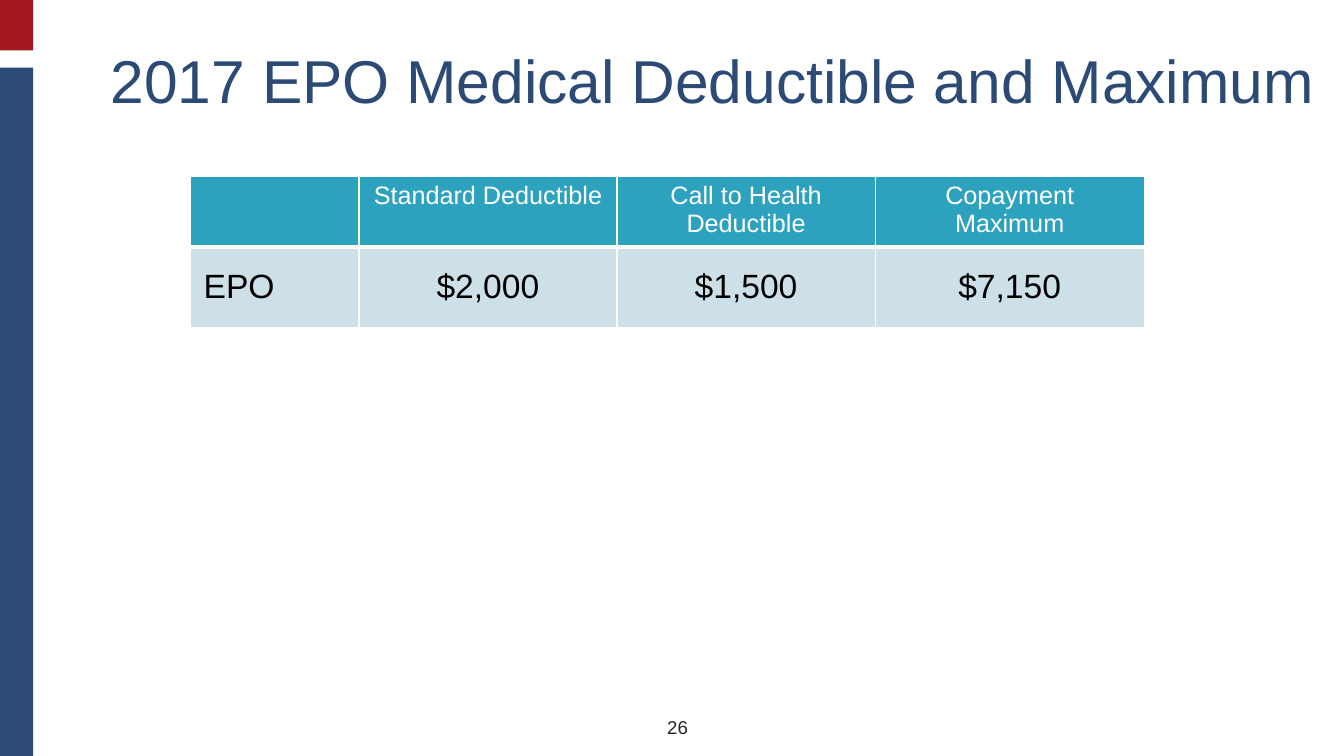
import dataclasses

import lxml.etree
import pptx
import pptx.dml.color
import pptx.enum.shapes
import pptx.enum.text
import pptx.oxml.ns
import pptx.slide
import pptx.table
import pptx.text.text
import pptx.util

Inches = pptx.util.Inches
Align = pptx.enum.text.PP_ALIGN
Anchor = pptx.enum.text.MSO_ANCHOR


@dataclasses.dataclass(frozen=True)
class Theme:
    font: str = "Arial"
    red: str = "A3171E"
    navy: str = "2B4A76"
    teal: str = "2DA2BF"
    pale_blue: str = "CDE0E8"
    white: str = "FFFFFF"
    black: str = "000000"
    grey: str = "262626"
    title_size: float = 43.2
    header_size: float = 18
    body_size: float = 24
    number_size: float = 13.3


@dataclasses.dataclass(frozen=True)
class Box:
    left: float
    top: float
    width: float
    height: float

    def lengths(self) -> tuple[int, int, int, int]:
        return Inches(self.left), Inches(self.top), Inches(self.width), Inches(self.height)


@dataclasses.dataclass(frozen=True)
class Bar:
    box: Box
    color: str


@dataclasses.dataclass(frozen=True)
class Label:
    text: str
    box: Box
    size: float
    color: str
    alignment: Align
    wrap: bool


@dataclasses.dataclass(frozen=True)
class TableRow:
    texts: tuple[str, ...]
    height: float
    size: float
    color: str
    fill: str
    anchor: Anchor
    first_alignment: Align
    bottom_border: float


THEME = Theme()
BARS = (
    Bar(Box(0, 0, 0.33, 0.5), THEME.red),
    Bar(Box(0, 0.67, 0.33, 6.83), THEME.navy),
)
LABELS = (
    Label("2017 EPO Medical Deductible and Maximum", Box(1, 0.25, 12.33, 1.08),
          THEME.title_size, THEME.navy, Align.LEFT, True),
    Label("26", Box(6.33, 7, 0.78, 0.42), THEME.number_size, THEME.grey, Align.CENTER, True),
)
TABLE_ORIGIN = (1.89, 1.75)
COLUMN_WIDTHS = (1.67, 2.56, 2.56, 2.67)
TABLE_ROWS = (
    TableRow(("", "Standard Deductible", "Call to Health Deductible", "Copayment Maximum"),
             0.65, THEME.header_size, THEME.white, THEME.teal, Anchor.TOP, Align.CENTER, 3),
    TableRow(("EPO", "$2,000", "$1,500", "$7,150"),
             0.8, THEME.body_size, THEME.black, THEME.pale_blue, Anchor.MIDDLE, Align.LEFT, 1),
)


def rgb(color: str) -> pptx.dml.color.RGBColor:
    return pptx.dml.color.RGBColor.from_string(color)


def write_text(text_frame: pptx.text.text.TextFrame, text: str, size: float,
               color: str, alignment: Align) -> None:
    text_frame.text = text
    paragraph = text_frame.paragraphs[0]
    paragraph.alignment = alignment
    for run in paragraph.runs:
        run.font.name = THEME.font
        run.font.size = pptx.util.Pt(size)
        run.font.bold = False
        run.font.color.rgb = rgb(color)


def add_bar(slide: pptx.slide.Slide, bar: Bar) -> None:
    shape = slide.shapes.add_shape(pptx.enum.shapes.MSO_SHAPE.RECTANGLE, *bar.box.lengths())
    shape.shadow.inherit = False
    shape.fill.solid()
    shape.fill.fore_color.rgb = rgb(bar.color)
    shape.line.fill.background()


def add_label(slide: pptx.slide.Slide, label: Label) -> None:
    text_frame = slide.shapes.add_textbox(*label.box.lengths()).text_frame
    text_frame.word_wrap = label.wrap
    text_frame.vertical_anchor = Anchor.MIDDLE
    write_text(text_frame, label.text, label.size, label.color, label.alignment)


def set_borders(cell: pptx.table._Cell, bottom_width: float) -> None:
    """Draw white cell borders, placed before the fill as the schema requires."""
    properties = cell._tc.get_or_add_tcPr()
    widths = {"a:lnL": 1, "a:lnR": 1, "a:lnT": 1, "a:lnB": bottom_width}
    for position, (tag, width) in enumerate(widths.items()):
        line = lxml.etree.Element(pptx.oxml.ns.qn(tag), w=str(pptx.util.Pt(width)))
        fill = lxml.etree.SubElement(line, pptx.oxml.ns.qn("a:solidFill"))
        lxml.etree.SubElement(fill, pptx.oxml.ns.qn("a:srgbClr"), val=THEME.white)
        properties.insert(position, line)


def fill_cell(cell: pptx.table._Cell, text: str, row: TableRow, alignment: Align,
              bottom_border: float) -> None:
    cell.margin_left = cell.margin_right = Inches(0.13)
    cell.margin_top = cell.margin_bottom = Inches(0.05)
    cell.vertical_anchor = row.anchor
    cell.fill.solid()
    cell.fill.fore_color.rgb = rgb(row.fill)
    set_borders(cell, bottom_border)
    write_text(cell.text_frame, text, row.size, row.color, alignment)


def add_deductible_table(slide: pptx.slide.Slide) -> None:
    box = Box(*TABLE_ORIGIN, sum(COLUMN_WIDTHS), sum(row.height for row in TABLE_ROWS))
    table = slide.shapes.add_table(len(TABLE_ROWS), len(COLUMN_WIDTHS), *box.lengths()).table
    for column, width in zip(table.columns, COLUMN_WIDTHS):
        column.width = Inches(width)
    for table_row, row in zip(table.rows, TABLE_ROWS):
        table_row.height = Inches(row.height)
        for index, (cell, text) in enumerate(zip(table_row.cells, row.texts)):
            alignment = Align.CENTER if index else row.first_alignment
            fill_cell(cell, text, row, alignment, row.bottom_border)


def main() -> None:
    presentation = pptx.Presentation()
    presentation.slide_width = Inches(13.33)
    presentation.slide_height = Inches(7.5)
    slide = presentation.slides.add_slide(presentation.slide_layouts[6])
    for bar in BARS:
        add_bar(slide, bar)
    for label in LABELS:
        add_label(slide, label)
    add_deductible_table(slide)
    presentation.save("out.pptx")


if __name__ == "__main__":
    main()
